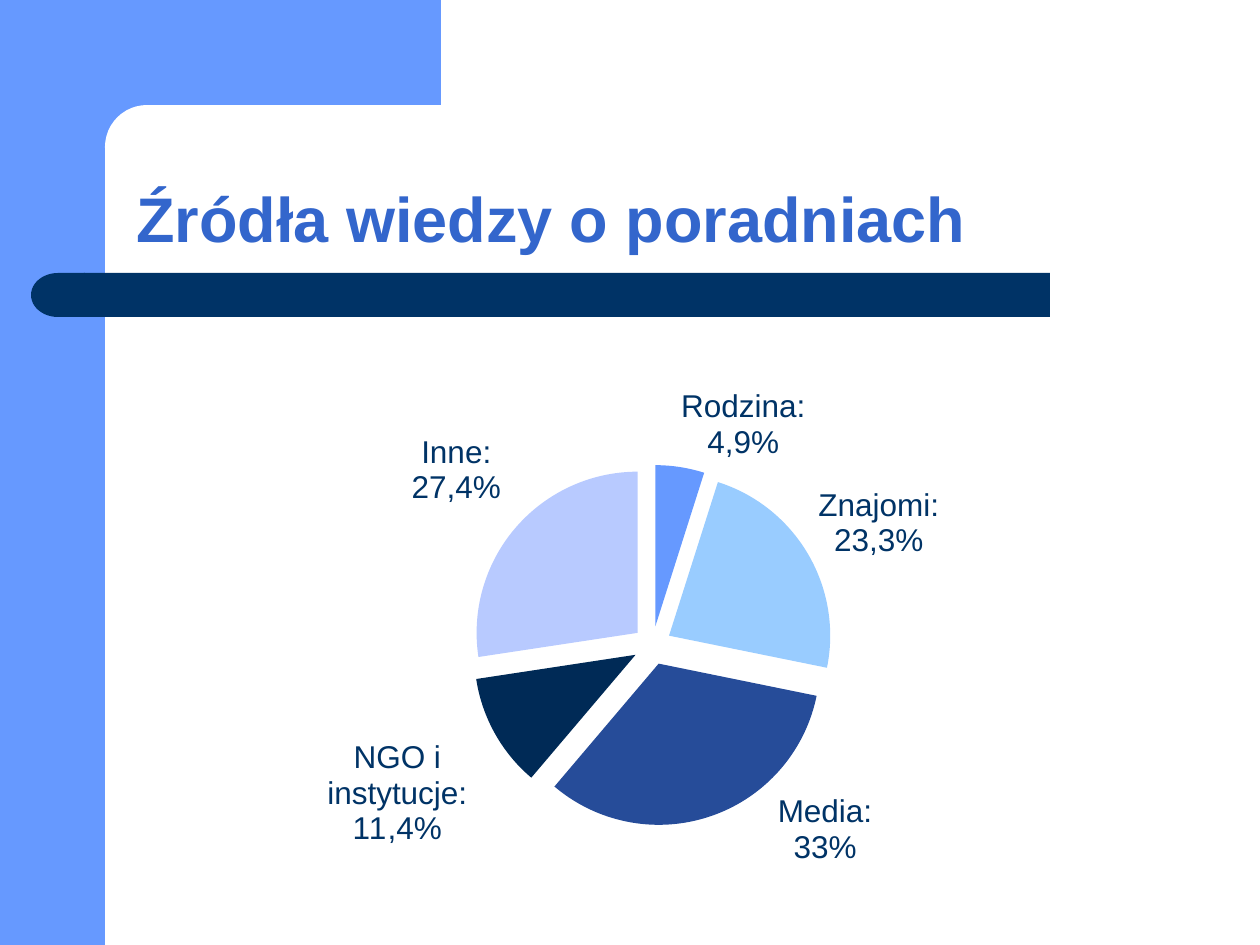
import dataclasses

import lxml.etree
import pptx
import pptx.chart.chart
import pptx.chart.data
import pptx.chart.point
import pptx.dml.color
import pptx.enum.chart
import pptx.enum.shapes
import pptx.enum.text
import pptx.oxml
import pptx.oxml.ns
import pptx.slide
import pptx.util

PIXELS_PER_INCH = 126
FONT = "Arial"
COLORS = {
    "sky": "6699FF",
    "white": "FFFFFF",
    "navy": "003366",
    "title": "3366CC",
    "light": "99CCFF",
    "royal": "264C99",
    "midnight": "002A56",
    "lavender": "B8CAFF",
}
CHART_WIDTH = 840
CHART_HEIGHT = 559
SHAPE_KIND = pptx.enum.shapes.MSO_SHAPE


@dataclasses.dataclass(frozen=True)
class Block:
    kind: SHAPE_KIND
    left: int
    top: int
    width: int
    height: int
    color: str
    mirrored: bool = False
    rounding: float | None = None


@dataclasses.dataclass(frozen=True)
class Source:
    name: str
    percent: float
    color: str
    shift_x: int = 0
    shift_y: int = 0


BLOCKS = [
    Block(SHAPE_KIND.RECTANGLE, 0, 0, 105, 945, "sky"),
    Block(SHAPE_KIND.RECTANGLE, 94, 0, 347, 147, "sky"),
    Block(SHAPE_KIND.ROUNDED_RECTANGLE, 105, 105, 703, 84, "white", rounding=0.5),
    Block(SHAPE_KIND.RECTANGLE, 84, 273, 966, 44, "navy"),
    Block(SHAPE_KIND.FLOWCHART_DELAY, 31, 273, 54, 44, "navy", mirrored=True),
]
SOURCES = [
    Source("Rodzina", 4.9, "sky"),
    Source("Znajomi", 23.3, "light", 4, 8),
    Source("Media", 33, "royal", 64, -29),
    Source("NGO i instytucje", 11.4, "midnight", -21, 3),
    Source("Inne", 27.4, "lavender", -9, -18),
]


def px(length: int) -> pptx.util.Emu:
    return pptx.util.Emu(round(length * 914400 / PIXELS_PER_INCH))


def rgb(name: str) -> pptx.dml.color.RGBColor:
    return pptx.dml.color.RGBColor.from_string(COLORS[name])


def add_block(slide: pptx.slide.Slide, block: Block) -> None:
    shape = slide.shapes.add_shape(
        block.kind, px(block.left), px(block.top), px(block.width), px(block.height)
    )
    shape.shadow.inherit = False
    shape.fill.solid()
    shape.fill.fore_color.rgb = rgb(block.color)
    shape.line.fill.background()
    if block.rounding is not None:
        shape.adjustments[0] = block.rounding
    if block.mirrored:
        shape._element.spPr.find(pptx.oxml.ns.qn("a:xfrm")).set("flipH", "1")


def add_title(slide: pptx.slide.Slide, text: str) -> None:
    shape = slide.shapes.add_textbox(px(124), px(105), px(1105), px(157))
    frame = shape.text_frame
    frame.word_wrap = True
    frame.vertical_anchor = pptx.enum.text.MSO_ANCHOR.BOTTOM
    paragraph = frame.paragraphs[0]
    paragraph.line_spacing = 0.9
    run = paragraph.add_run()
    run.text = text
    run.font.name = FONT
    run.font.size = pptx.util.Pt(36)
    run.font.bold = True
    run.font.color.rgb = rgb("title")


def manual_layout(settings: dict[str, str | float]) -> lxml.etree._Element:
    children = "".join(f'<c:{key} val="{value}"/>' for key, value in settings.items())
    return pptx.oxml.parse_xml(
        f'<c:layout {pptx.oxml.ns.nsdecls("c")}>'
        f"<c:manualLayout>{children}</c:manualLayout></c:layout>"
    )


def place_plot(chart: pptx.chart.chart.Chart) -> None:
    plot_area = chart._chartSpace.chart.plotArea
    old_layout = plot_area.find(pptx.oxml.ns.qn("c:layout"))
    if old_layout is not None:
        plot_area.remove(old_layout)
    edges = {"layoutTarget": "inner", "xMode": "edge", "yMode": "edge"}
    box = {
        "x": 249 / CHART_WIDTH,
        "y": 101 / CHART_HEIGHT,
        "w": 361 / CHART_WIDTH,
        "h": 363 / CHART_HEIGHT,
    }
    plot_area.insert(0, manual_layout(edges | box))


def style_point(point: pptx.chart.point.Point, source: Source) -> None:
    point.format.fill.solid()
    point.format.fill.fore_color.rgb = rgb(source.color)
    point.format.line.fill.background()
    label = point.data_label
    frame = label.text_frame
    percent = f"{source.percent:g}%".replace(".", ",")
    for paragraph, text in (
        (frame.paragraphs[0], f"{source.name}:"),
        (frame.add_paragraph(), percent),
    ):
        run = paragraph.add_run()
        run.text = text
        run.font.name = FONT
        run.font.size = pptx.util.Pt(18)
        run.font.color.rgb = rgb("navy")
    label.position = pptx.enum.chart.XL_LABEL_POSITION.OUTSIDE_END
    if source.shift_x or source.shift_y:
        shift = {"x": source.shift_x / CHART_WIDTH, "y": source.shift_y / CHART_HEIGHT}
        label._get_or_add_dLbl().insert(1, manual_layout(shift))


def add_pie(slide: pptx.slide.Slide) -> None:
    data = pptx.chart.data.CategoryChartData()
    data.categories = [source.name for source in SOURCES]
    data.add_series("Series 1", [source.percent for source in SOURCES])
    chart = slide.shapes.add_chart(
        pptx.enum.chart.XL_CHART_TYPE.PIE_EXPLODED,
        px(223), px(363), px(CHART_WIDTH), px(CHART_HEIGHT), data,
    ).chart
    chart.has_legend = False
    chart.has_title = False
    chart.font.name = FONT
    chart.font.size = pptx.util.Pt(18)
    chart.font.color.rgb = rgb("navy")
    place_plot(chart)
    plot = chart.plots[0]
    plot.vary_by_categories = True
    series = plot.series[0]
    series._element.find(pptx.oxml.ns.qn("c:explosion")).set("val", "12")
    for index, source in enumerate(SOURCES):
        style_point(series.points[index], source)
    labels = series.data_labels
    labels.show_value = True
    labels.show_category_name = True
    leader_lines = labels._element.find(pptx.oxml.ns.qn("c:showLeaderLines"))
    if leader_lines is not None:
        leader_lines.set("val", "0")


def main() -> None:
    presentation = pptx.Presentation()
    presentation.slide_width = px(1260)
    presentation.slide_height = px(945)
    slide = presentation.slides.add_slide(presentation.slide_layouts[6])
    for block in BLOCKS:
        add_block(slide, block)
    add_title(slide, "Źródła wiedzy o poradniach")
    add_pie(slide)
    presentation.save("out.pptx")


if __name__ == "__main__":
    main()
